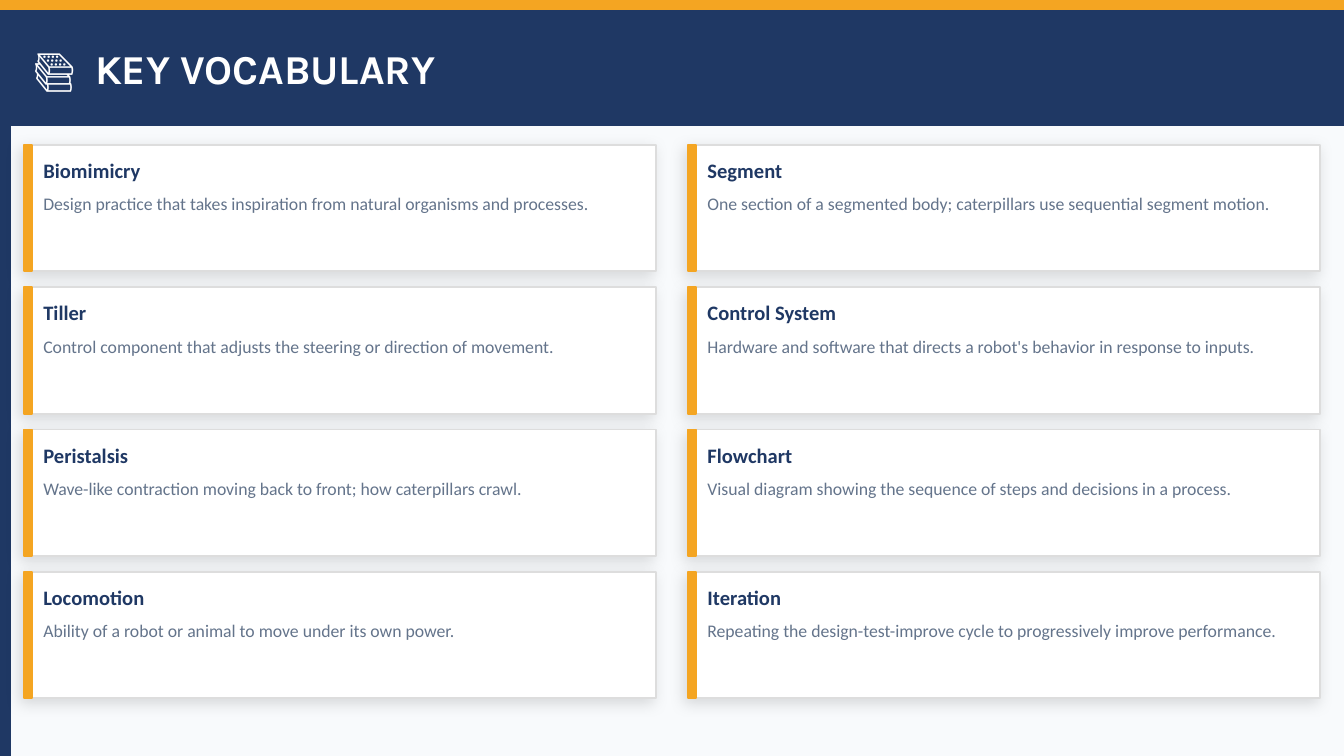
import pptx
import pptx.dml.color
import pptx.enum.shapes
import pptx.enum.text
import pptx.oxml
import pptx.oxml.ns
import pptx.util
from pptx.util import Cm

RGBColor = pptx.dml.color.RGBColor
NAVY = RGBColor(0x1F, 0x38, 0x64)
AMBER = RGBColor(0xF4, 0xA5, 0x22)
WHITE = RGBColor(0xFF, 0xFF, 0xFF)
BORDER = RGBColor(0xDD, 0xDD, 0xDD)
SLATE = RGBColor(0x64, 0x74, 0x8B)
BACKGROUND = RGBColor(0xF8, 0xFA, 0xFC)

SLIDE_WIDTH, SLIDE_HEIGHT = 25.4, 14.29
BAR = 0.2
HEADER_HEIGHT = 2.16

# Card grid, in centimetres
GRID_LEFT, GRID_TOP = 0.46, 2.74
CARD_WIDTH, CARD_HEIGHT = 11.94, 2.39
COLUMN_PITCH, ROW_PITCH = 12.55, 2.69

# Each inner list is one column of cards
VOCABULARY = [
    [
        ("Biomimicry", "Design practice that takes inspiration from natural organisms and processes."),
        ("Tiller", "Control component that adjusts the steering or direction of movement."),
        ("Peristalsis", "Wave-like contraction moving back to front; how caterpillars crawl."),
        ("Locomotion", "Ability of a robot or animal to move under its own power."),
    ],
    [
        ("Segment", "One section of a segmented body; caterpillars use sequential segment motion."),
        ("Control System", "Hardware and software that directs a robot's behavior in response to inputs."),
        ("Flowchart", "Visual diagram showing the sequence of steps and decisions in a process."),
        ("Iteration", "Repeating the design-test-improve cycle to progressively improve performance."),
    ],
]


def add_rectangle(slide, left, top, width, height, fill, line=None):
    shape = slide.shapes.add_shape(
        pptx.enum.shapes.MSO_SHAPE.RECTANGLE, Cm(left), Cm(top), Cm(width), Cm(height))
    shape.shadow.inherit = False
    shape.fill.solid()
    shape.fill.fore_color.rgb = fill
    shape.line.color.rgb = line or fill
    shape.line.width = pptx.util.Pt(1)
    return shape


def add_soft_shadow(shape):
    effects = shape._element.spPr.find(pptx.oxml.ns.qn("a:effectLst"))
    effects.append(pptx.oxml.parse_xml(
        f'<a:outerShdw {pptx.oxml.ns.nsdecls("a")} blurRad="{pptx.util.Pt(8)}" '
        f'dist="{pptx.util.Pt(3)}" dir="{135 * 60000}" algn="bl" rotWithShape="0">'
        '<a:srgbClr val="000000"><a:alpha val="12000"/></a:srgbClr></a:outerShdw>'))


def add_text(slide, text, left, top, width, height, *, size, color,
             font="Calibri", bold=False, middle=False, tab=None):
    box = slide.shapes.add_textbox(Cm(left), Cm(top), Cm(width), Cm(height))
    frame = box.text_frame
    frame.word_wrap = True
    frame.margin_left = frame.margin_top = frame.margin_right = frame.margin_bottom = 0
    anchor = pptx.enum.text.MSO_ANCHOR
    frame.vertical_anchor = anchor.MIDDLE if middle else anchor.TOP
    paragraph = frame.paragraphs[0]
    if tab:
        paragraph._p.get_or_add_pPr().append(pptx.oxml.parse_xml(
            f'<a:tabLst {pptx.oxml.ns.nsdecls("a")}><a:tab pos="{Cm(tab)}" algn="l"/></a:tabLst>'))
    run = paragraph.add_run()
    run.text = text
    run.font.name = font
    run.font.size = pptx.util.Pt(size)
    run.font.bold = bold
    run.font.color.rgb = color


def add_header(slide):
    add_rectangle(slide, 0, 0, SLIDE_WIDTH, BAR, AMBER)
    add_rectangle(slide, 0, BAR, BAR, SLIDE_HEIGHT - BAR, NAVY)
    add_rectangle(slide, BAR, BAR, SLIDE_WIDTH - BAR, HEADER_HEIGHT, NAVY)
    add_text(slide, "📚\tKEY VOCABULARY", 0.64, BAR, 24.13, HEADER_HEIGHT,
             size=22, color=WHITE, font="Karla", bold=True, middle=True, tab=1.16)


def add_card(slide, left, top, term, definition):
    card = add_rectangle(slide, left, top, CARD_WIDTH, CARD_HEIGHT, WHITE, BORDER)
    add_soft_shadow(card)
    add_rectangle(slide, left, top, 0.15, CARD_HEIGHT, AMBER)
    add_text(slide, term, left + 0.36, top + 0.1, 11.38, 0.76,
             size=11, color=NAVY, bold=True, middle=True)
    add_text(slide, definition, left + 0.36, top + 0.91, 11.38, 1.32,
             size=9.5, color=SLATE)


def main():
    presentation = pptx.Presentation()
    presentation.slide_width = Cm(SLIDE_WIDTH)
    presentation.slide_height = Cm(SLIDE_HEIGHT)
    slide = presentation.slides.add_slide(presentation.slide_layouts[6])
    slide.background.fill.solid()
    slide.background.fill.fore_color.rgb = BACKGROUND

    # Bars and title
    add_header(slide)

    # Vocabulary cards
    for column, entries in enumerate(VOCABULARY):
        for row, (term, definition) in enumerate(entries):
            add_card(slide, GRID_LEFT + column * COLUMN_PITCH,
                     GRID_TOP + row * ROW_PITCH, term, definition)

    presentation.save("out.pptx")


if __name__ == "__main__":
    main()
